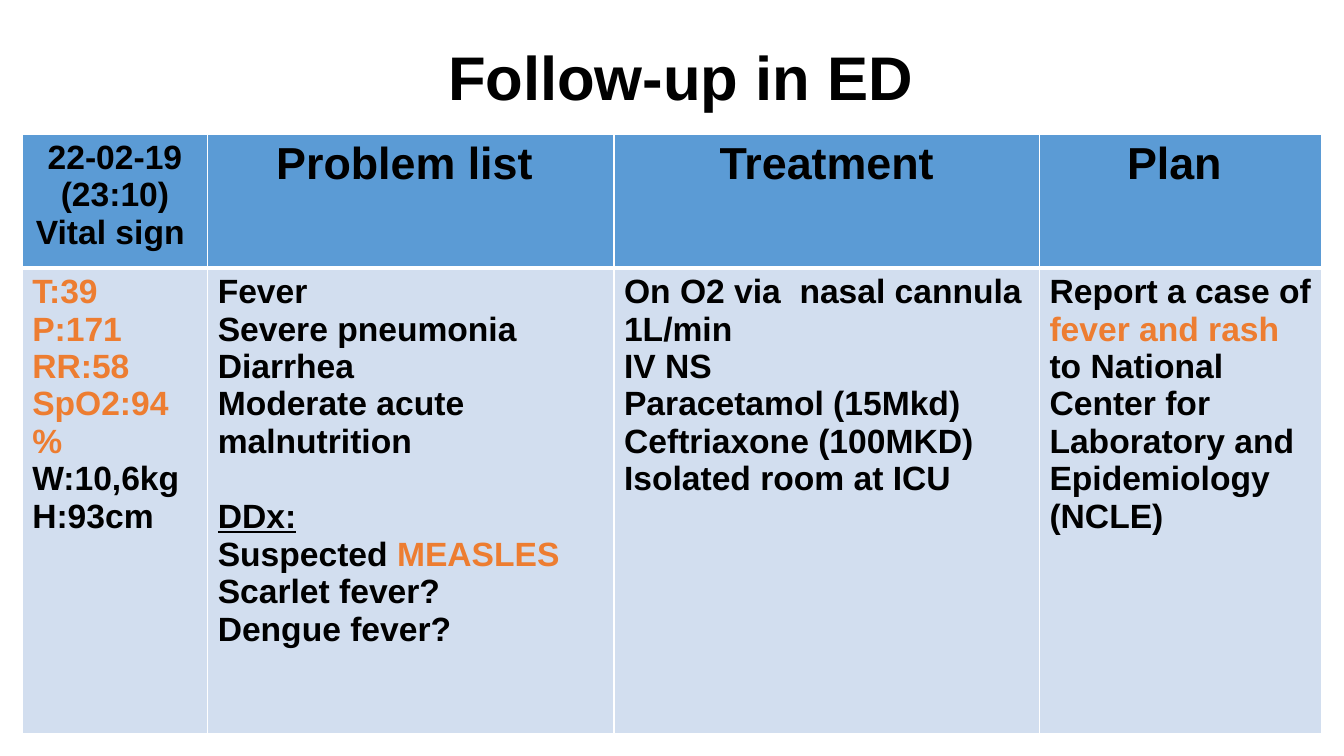
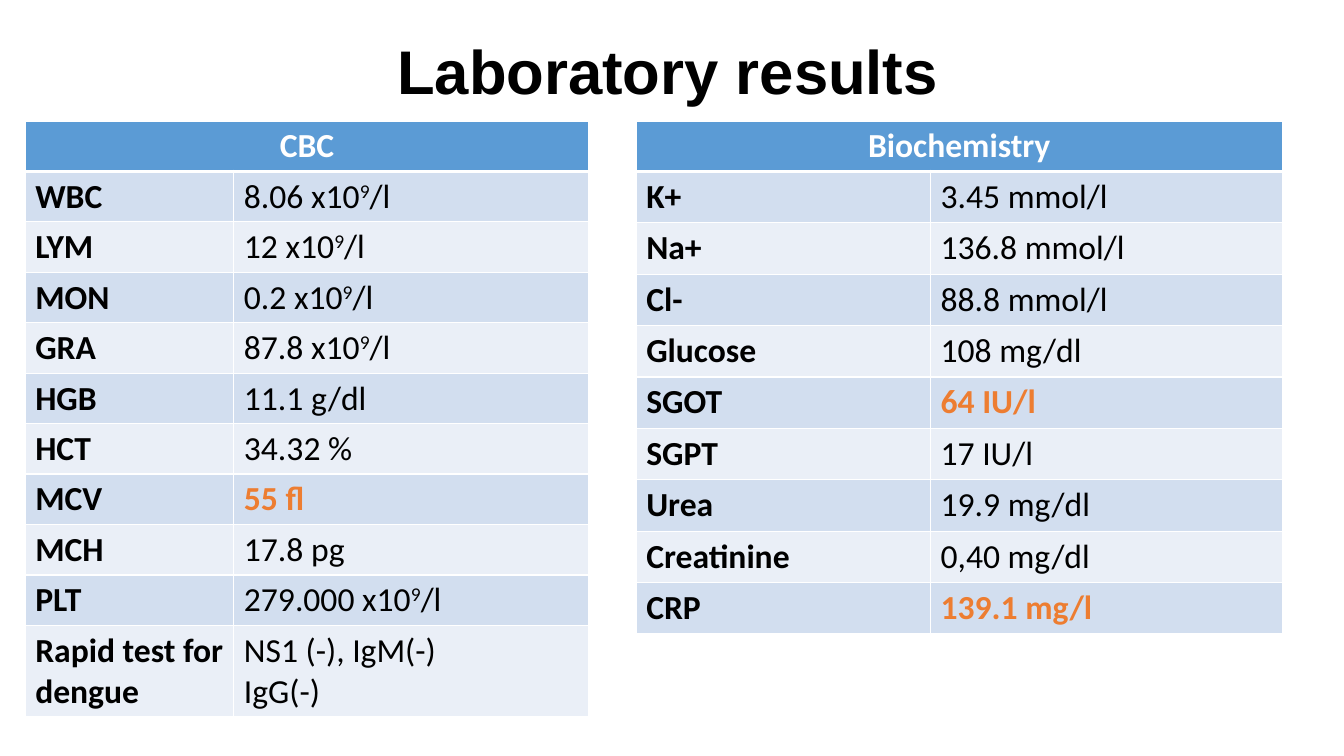
from pptx import Presentation
from pptx.dml.color import RGBColor as Rgb
from pptx.enum.text import MSO_ANCHOR as Anchor, PP_ALIGN as Align
from pptx.oxml.ns import qn
from pptx.util import Inches, Pt
from lxml.etree import SubElement as Sub

# Shared colours and text formats
HUES = {"ink": "000000", "white": "FFFFFF", "alert": "ED7D31",
        "head": "5B9BD5", "dark": "D2DEEF", "light": "EAEFF7"}
TITLE = {"name": "Arial", "size": Pt(44), "bold": True, "hue": "ink"}
NOTE = {**TITLE, "size": Pt(24)}
TOPIC = {**TITLE, "size": Pt(32)}
LABEL = {**NOTE, "name": "Calibri"}
HEAD = {**LABEL, "hue": "white"}
VALUE = {**LABEL, "bold": False}
ALERT = {"hue": "alert", "bold": True}


# Text: a line is a string or a list of runs, a run is a string or (text, format)
def style(run, look):
    for key, val in look.items():
        if key == "hue":
            run.font.color.rgb = Rgb.from_string(HUES[val])
        elif key == "raise":
            run.font._element.set("baseline", str(val * 1000))
        else:
            setattr(run.font, key, val)


def write(frame, lines, look, align=Align.LEFT):
    for i, line in enumerate(lines):
        para = frame.paragraphs[0] if i == 0 else frame.add_paragraph()
        para.alignment = align
        for part in [line] if isinstance(line, str) else line:
            text, extra = (part, {}) if isinstance(part, str) else part
            run = para.add_run()
            run.text = text
            style(run, {**look, **extra})


def title(slide, text, left, top, width, space=1.0):
    box = slide.shapes.add_textbox(Inches(left), Inches(top),
                                   Inches(width), Inches(0.8))
    frame = box.text_frame
    frame.word_wrap = True
    frame.vertical_anchor = Anchor.MIDDLE
    write(frame, [text], TITLE, Align.CENTER)
    frame.paragraphs[0].line_spacing = space


# Tables
def paint(cell, row):
    props = cell._tc.get_or_add_tcPr()
    wide = {"lnT": 3 if row == 1 else 1, "lnB": 3 if row == 0 else 1}
    for side in ("lnL", "lnR", "lnT", "lnB"):
        edge = Sub(props, qn("a:" + side), w=str(Pt(wide.get(side, 1))))
        Sub(Sub(edge, qn("a:solidFill")), qn("a:srgbClr"), val=HUES["white"])
    tone = "head" if row == 0 else "dark" if row % 2 else "light"
    cell.fill.solid()
    cell.fill.fore_color.rgb = Rgb.from_string(HUES[tone])


def grid(slide, left, top, cols, rows):
    shape = slide.shapes.add_table(
        len(rows), len(cols), Inches(left), Inches(top),
        Inches(sum(cols)), Inches(sum(rows)))
    table = shape.table
    for items, name, sizes in ((table.columns, "width", cols),
                               (table.rows, "height", rows)):
        for item, size in zip(items, sizes):
            setattr(item, name, Inches(size))
    for r in range(len(rows)):
        for c in range(len(cols)):
            paint(table.cell(r, c), r)
    return table


def lab(slide, left, cols, rows, name, tests):
    table = grid(slide, left, 1.2, cols, rows)
    table.cell(0, 0).merge(table.cell(0, 1))
    write(table.cell(0, 0).text_frame, [name], HEAD, Align.CENTER)
    for r, (test, *lines) in enumerate(tests, 1):
        write(table.cell(r, 0).text_frame, [test], LABEL)
        write(table.cell(r, 1).text_frame, lines, VALUE)


def count(num):
    return [num + " x10", ("9", {"raise": 30}), "/l"]


def alert(text):
    return [(text, ALERT)]


# Content
HEADS = [(["22-02-19 (23:10)", "Vital sign "], NOTE),
         (["Problem list "], TOPIC), (["Treatment"], TOPIC), (["Plan "], TOPIC)]
VITALS = [alert(t) for t in ("T:39", "P:171", "RR:58", "SpO2:94%")]
VITALS += ["W:10,6kg", "H:93cm"]
ISSUES = ["Fever", "Severe pneumonia", "Diarrhea", "Moderate acute malnutrition",
          [("DDx:", {"underline": True})],
          ["Suspected ", ("MEASLES", ALERT)], "Scarlet fever?", "Dengue fever?"]
CARE = ["On O2 via  nasal cannula 1L/min", "IV NS", "Paracetamol (15Mkd)",
        "Ceftriaxone (100MKD)", "Isolated room at ICU"]
PLAN = [["Report a case of ", ("fever and rash ", ALERT),
         "to National Center for Laboratory and Epidemiology"], "(NCLE)"]
CBC = [("WBC", count("8.06")), ("LYM", count("12")), ("MON", count("0.2")),
       ("GRA", count("87.8")), ("HGB", "11.1 g/dl"), ("HCT", "34.32 %"),
       ("MCV", alert("55 fl")), ("MCH", "17.8 pg"), ("PLT", count("279.000")),
       ("Rapid test for dengue", "NS1 (-), IgM(-)", "IgG(-)")]
CHEM = [("K+", "3.45 mmol/l"), ("Na+", "136.8 mmol/l"), ("Cl-", "88.8 mmol/l"),
        ("Glucose", "108 mg/dl"), ("SGOT", alert("64 IU/l")),
        ("SGPT", "17 IU/l"), ("Urea", "19.9 mg/dl"),
        ("Creatinine", "0,40 mg/dl"), ("CRP", alert("139.1 mg/l"))]


# Slides
def follow(slide):
    title(slide, " Follow-up in ED", 0.92, 0.4, 11.5, 0.9)
    table = grid(slide, 0.22, 1.33, [1.84, 4.03, 4.22, 2.8], [1.33, 4.62])
    for c, (lines, look) in enumerate(HEADS):
        write(table.cell(0, c).text_frame, lines, look, Align.CENTER)
    for c, lines in enumerate((VITALS, ISSUES, CARE, PLAN)):
        write(table.cell(1, c).text_frame, lines, NOTE)
    # One line of space above the differential diagnosis
    table.cell(1, 1).text_frame.paragraphs[4].space_before = Pt(27)


def results(slide):
    lab(slide, 0.25, [2.07, 3.52], [0.49] * 10 + [0.88], "CBC", CBC)
    lab(slide, 6.31, [2.92, 3.49], [0.5] + [0.51] * 9, "Biochemistry", CHEM)
    title(slide, "Laboratory results", 1.14, 0.29, 10.97)


def main():
    deck = Presentation()
    deck.slide_width, deck.slide_height = Inches(13.33), Inches(7.5)
    for build in (follow, results):
        build(deck.slides.add_slide(deck.slide_layouts[6]))
    deck.save("out.pptx")


if __name__ == "__main__":
    main()
